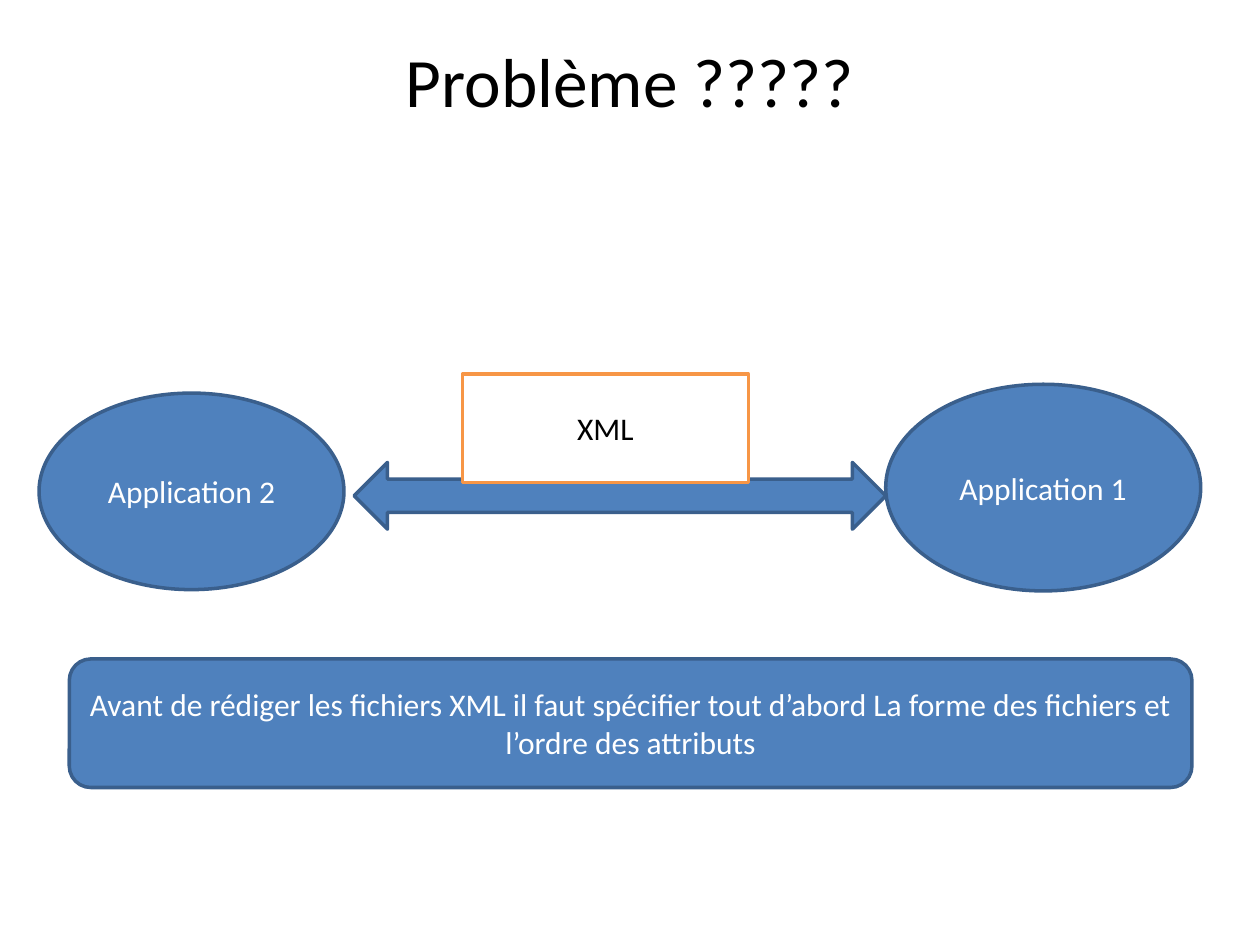
from pptx import Presentation
from pptx.dml.color import RGBColor
from pptx.enum.shapes import MSO_SHAPE
from pptx.enum.text import MSO_ANCHOR, PP_ALIGN
from pptx.util import Inches, Pt


def color(value):
    return RGBColor.from_string(value)


def write(box, text, size=18, ink="FFFFFF", anchor=MSO_ANCHOR.MIDDLE):
    frame = box.text_frame
    frame.word_wrap = True
    frame.vertical_anchor = anchor
    para = frame.paragraphs[0]
    para.alignment = PP_ALIGN.CENTER
    span = para.add_run()
    span.text = text
    span.font.name = "Calibri"
    span.font.size = Pt(size)
    span.font.color.rgb = color(ink)


BLUE, NAVY, ORANGE, WHITE, BLACK = "4F81BD", "3A5F8C", "F79646", "FFFFFF", "000000"

deck = Presentation()
deck.slide_width = Inches(10)
deck.slide_height = Inches(7.5)
page = deck.slides.add_slide(deck.slide_layouts[6])

title = page.shapes.add_textbox(Inches(0.5), Inches(0.3), Inches(9), Inches(1.25))
title.text_frame.margin_top = Inches(0)
write(title, "Problème ?????", size=39.6, ink=BLACK, anchor=MSO_ANCHOR.TOP)

advice = (
    "Avant de rédiger les fichiers XML il faut spécifier tout d’abord "
    "La forme des fichiers et l’ordre des attributs"
)
diagram = [
    (MSO_SHAPE.OVAL, 7.03, 3.05, 2.5, 1.64, BLUE, NAVY, WHITE, "Application 1"),
    (MSO_SHAPE.OVAL, 0.31, 3.12, 2.42, 1.56, BLUE, NAVY, WHITE, "Application 2"),
    (MSO_SHAPE.LEFT_RIGHT_ARROW, 2.81, 3.67, 4.22, 0.53, BLUE, NAVY, WHITE, ""),
    (MSO_SHAPE.RECTANGLE, 3.67, 2.97, 2.27, 0.86, WHITE, ORANGE, BLACK, "XML"),
    (MSO_SHAPE.ROUNDED_RECTANGLE, 0.55, 5.23, 8.91, 1.02, BLUE, NAVY, WHITE, advice),
]
for kind, left, top, width, height, fill, outline, ink, text in diagram:
    shape = page.shapes.add_shape(
        kind, Inches(left), Inches(top), Inches(width), Inches(height)
    )
    shape.shadow.inherit = False
    shape.fill.solid()
    shape.fill.fore_color.rgb = color(fill)
    shape.line.color.rgb = color(outline)
    shape.line.width = Pt(2)
    if text:
        write(shape, text, ink=ink)

deck.save("out.pptx")
